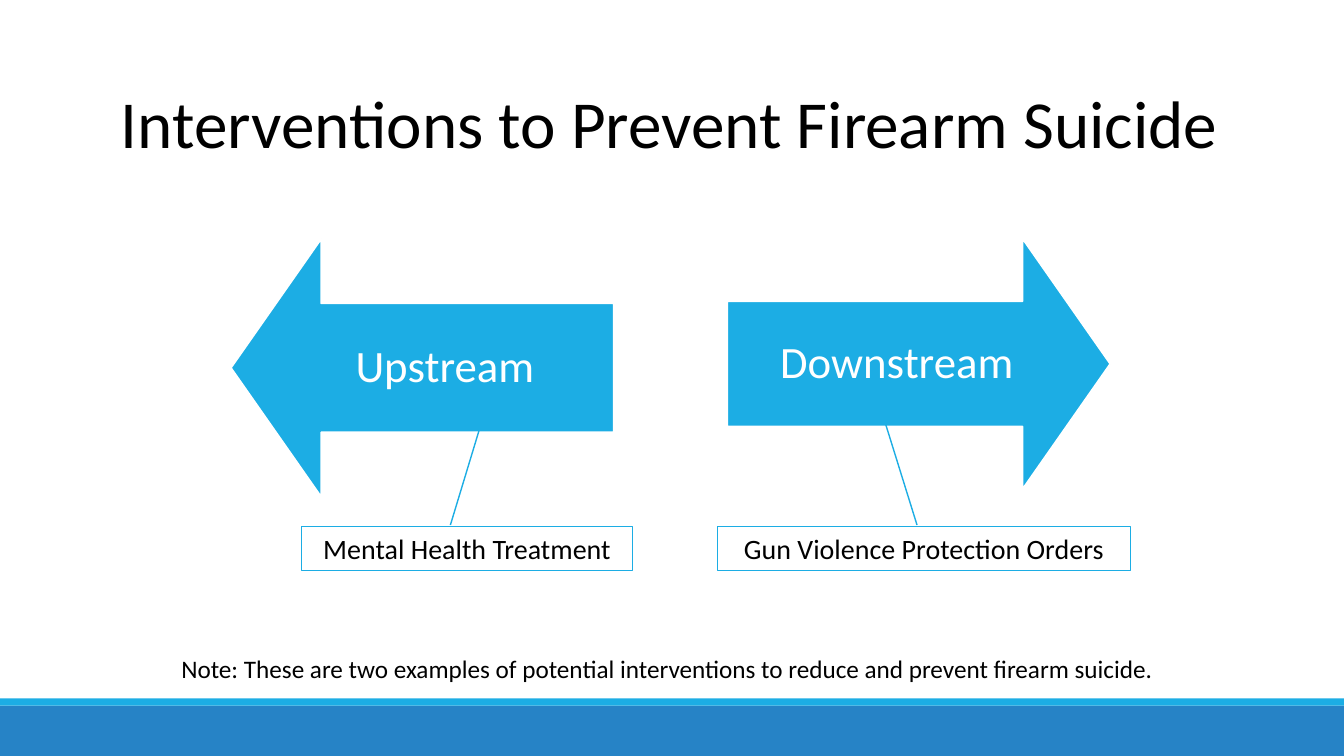
from lxml.etree import SubElement
from pptx import Presentation
from pptx.dml.color import RGBColor
from pptx.enum.shapes import MSO_CONNECTOR, MSO_SHAPE
from pptx.enum.text import MSO_ANCHOR, PP_ALIGN
from pptx.oxml.ns import qn
from pptx.util import Cm, Pt

BLUE = RGBColor(0x26, 0x83, 0xC6)
CYAN = RGBColor(0x1C, 0xAD, 0xE4)
WHITE = RGBColor(0xFF, 0xFF, 0xFF)
BLACK = RGBColor(0, 0, 0)
FONT = "Calibri"

SLIDE_WIDTH, SLIDE_HEIGHT = 33.87, 19.05
TITLE = "Interventions to Prevent Firearm Suicide"
TITLE_BOX = (2.46, 1.9, 28.83, 2.31)
NOTE = ("Note: These are two examples of potential interventions "
        "to reduce and prevent firearm suicide.")
NOTE_BOX = (4.32, 16.33, 25.12, 1.02)
FOOTER_BARS = [(17.78, 1.27, BLUE), (17.6, 0.18, CYAN)]
DIRECTIONS = [
    {
        "label": "Upstream",
        "shape": MSO_SHAPE.LEFT_ARROW,
        "arrow": (5.82, 6.02, 9.65, 6.5),
        "example": "Mental Health Treatment",
        "box": (7.59, 13.26, 8.36, 1.12),
        "line": (12.19, 10.46, 11.35, 13.23),
    },
    {
        "label": "Downstream",
        "shape": MSO_SHAPE.RIGHT_ARROW,
        "arrow": (18.33, 6.01, 9.65, 6.32),
        "example": "Gun Violence Protection Orders",
        "box": (18.08, 13.26, 10.41, 1.12),
        "line": (22.17, 10.21, 23.11, 13.23),
    },
]


def lengths(values):
    return [Cm(value) for value in values]


def write(shape, text, size, color, alignment=PP_ALIGN.CENTER):
    frame = shape.text_frame
    frame.text = text
    frame.word_wrap = True
    frame.vertical_anchor = MSO_ANCHOR.MIDDLE
    paragraph = frame.paragraphs[0]
    paragraph.alignment = alignment
    font = paragraph.runs[0].font
    font.name = FONT
    font.size = Pt(size)
    font.color.rgb = color


def add_block(slide, kind, box, fill=None, line=None, width=0.75):
    shape = slide.shapes.add_shape(kind, *lengths(box))
    shape.shadow.inherit = False
    if fill is None:
        shape.fill.background()
    else:
        shape.fill.solid()
        shape.fill.fore_color.rgb = fill
    if line is None:
        shape.line.fill.background()
    else:
        shape.line.color.rgb = line
        shape.line.width = Pt(width)
    return shape


def add_direction(slide, direction):
    arrow = add_block(slide, direction["shape"], direction["arrow"], CYAN, WHITE, 1.25)
    arrow.adjustments[0] = 0.5
    arrow.adjustments[1] = 0.35
    write(arrow, direction["label"], 32, WHITE)
    arrow.text_frame.paragraphs[0].line_spacing = 0.9

    example = add_block(slide, MSO_SHAPE.RECTANGLE, direction["box"], line=CYAN)
    write(example, direction["example"], 20, BLACK)

    connector = slide.shapes.add_connector(MSO_CONNECTOR.STRAIGHT, *lengths(direction["line"]))
    connector.line.color.rgb = CYAN
    connector.line.width = Pt(1)
    SubElement(connector._element.spPr, qn("a:effectLst"))


def main():
    presentation = Presentation()
    presentation.slide_width = Cm(SLIDE_WIDTH)
    presentation.slide_height = Cm(SLIDE_HEIGHT)
    slide = presentation.slides.add_slide(presentation.slide_layouts[5])

    for top, height, color in FOOTER_BARS:
        add_block(slide, MSO_SHAPE.RECTANGLE, (0, top, SLIDE_WIDTH, height), color)

    title = slide.shapes.title
    title.left, title.top, title.width, title.height = lengths(TITLE_BOX)
    write(title, TITLE, 48, BLACK)

    for direction in DIRECTIONS:
        add_direction(slide, direction)

    note = slide.shapes.add_textbox(*lengths(NOTE_BOX))
    write(note, NOTE, 18, BLACK, PP_ALIGN.LEFT)

    presentation.save("out.pptx")


if __name__ == "__main__":
    main()
